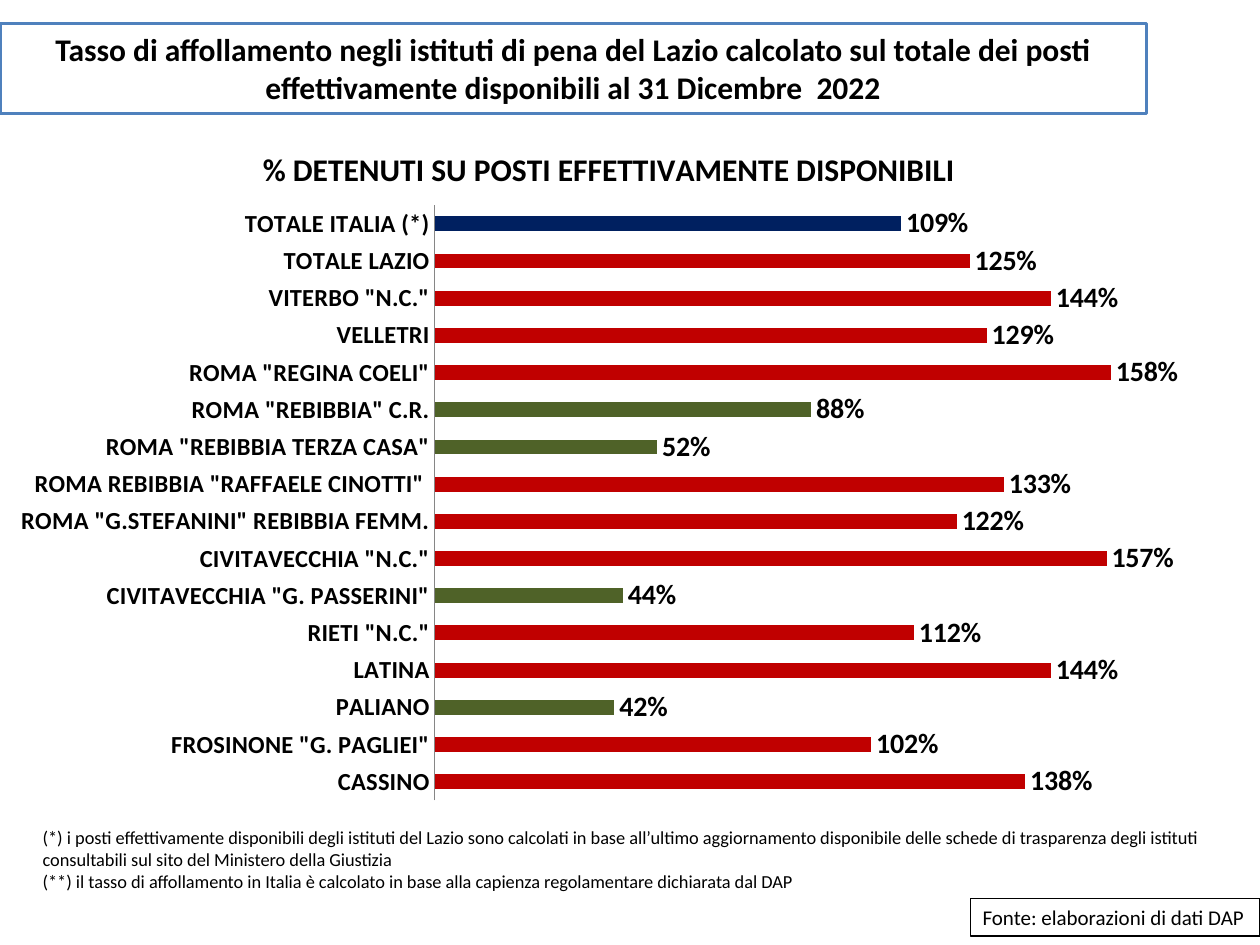
import dataclasses
import pptx
import pptx.chart.data
import pptx.dml.color
import pptx.enum.chart
import pptx.enum.shapes
import pptx.enum.text
import pptx.oxml
import pptx.oxml.ns
import pptx.util


@dataclasses.dataclass(frozen=True)
class Theme:
    font: str = "Calibri"
    ink: str = "000000"
    paper: str = "FFFFFF"
    frame: str = "4F81BD"
    axis: str = "868686"
    over: str = "C00000"
    under: str = "4F6228"
    nation: str = "002060"
    head: float = 18
    value: float = 16
    label: float = 14
    source: float = 12
    note: float = 10.5


THEME = Theme()
WIDE, HIGH = pptx.util.Inches(10), pptx.util.Inches(7.5)
TOTAL = "TOTALE ITALIA (*)"
RATES = [
    ("CASSINO", 1.38),
    ('FROSINONE "G. PAGLIEI"', 1.02),
    ("PALIANO", 0.42),
    ("LATINA", 1.44),
    ('RIETI "N.C."', 1.12),
    ('CIVITAVECCHIA "G. PASSERINI"', 0.44),
    ('CIVITAVECCHIA "N.C."', 1.57),
    ('ROMA "G.STEFANINI" REBIBBIA FEMM.', 1.22),
    ('ROMA REBIBBIA "RAFFAELE CINOTTI" ', 1.33),
    ('ROMA "REBIBBIA TERZA CASA"', 0.52),
    ('ROMA "REBIBBIA" C.R.', 0.88),
    ('ROMA "REGINA COELI"', 1.58),
    ("VELLETRI", 1.29),
    ('VITERBO "N.C."', 1.44),
    ("TOTALE LAZIO", 1.25),
    (TOTAL, 1.09),
]
NOTES = [
    "(*) i posti effettivamente disponibili degli istituti del Lazio sono calcolati in base "
    "all’ultimo aggiornamento disponibile delle schede di trasparenza degli istituti "
    "consultabili sul sito del Ministero della Giustizia",
    "(**) il tasso di affollamento in Italia è calcolato in base alla capienza "
    "regolamentare dichiarata dal DAP",
]


def area(left, top, width, height):
    return [int(part * side / 100) for part, side in
            ((left, WIDE), (top, HIGH), (width, WIDE), (height, HIGH))]


def tint(name):
    return pptx.dml.color.RGBColor.from_string(name)


def paint(fill, name):
    fill.solid()
    fill.fore_color.rgb = tint(name)


def style(font, size, bold=False):
    font.name, font.size, font.bold = THEME.font, pptx.util.Pt(size), bold
    font.color.rgb = tint(THEME.ink)


def border(shape, name, width):
    paint(shape.fill, THEME.paper)
    shape.line.color.rgb = tint(name)
    shape.line.width = pptx.util.Pt(width)


def write(shape, lines, size, align, bold=False, wrap=True):
    frame = shape.text_frame
    frame.word_wrap = wrap
    frame.text = "\n".join(lines)
    for para in frame.paragraphs:
        para.alignment = align
        style(para.font, size, bold)
    return frame


def heading(slide, box):
    title = slide.shapes.title
    title.left, title.top, title.width, title.height = box
    border(title, THEME.frame, 2)
    frame = write(title, ["Tasso di affollamento negli istituti di pena del Lazio calcolato sul "
                          "totale dei posti effettivamente disponibili al 31 Dicembre  2022"],
                  THEME.head, pptx.enum.text.PP_ALIGN.CENTER, bold=True)
    frame.vertical_anchor = pptx.enum.text.MSO_ANCHOR.TOP
    frame.auto_size = pptx.enum.text.MSO_AUTO_SIZE.NONE


def layout(parent, inner=False, **shares):
    names = pptx.oxml.ns.nsdecls("c")
    target = '<c:layoutTarget val="inner"/>' if inner else ""
    modes = "".join(f'<c:{key}Mode val="edge"/>' for key in "xy")
    sizes = "".join(f'<c:{key} val="{share}"/>' for key, share in shares.items())
    for old in parent.findall(pptx.oxml.ns.qn("c:layout")):
        parent.remove(old)
    node = pptx.oxml.parse_xml(f"<c:layout {names}><c:manualLayout>{target}{modes}{sizes}"
                               "</c:manualLayout></c:layout>")
    text = parent.find(pptx.oxml.ns.qn("c:tx"))
    parent.insert(0 if text is None else parent.index(text) + 1, node)


def shade(name, rate):
    if name == TOTAL:
        return THEME.nation
    return THEME.over if rate > 1 else THEME.under


def graph(slide, box):
    data = pptx.chart.data.CategoryChartData(number_format="0%")
    data.categories = [name for name, rate in RATES]
    data.add_series("Series 1", [rate for name, rate in RATES])
    kind = pptx.enum.chart.XL_CHART_TYPE.BAR_CLUSTERED
    chart = slide.shapes.add_chart(kind, *box, data).chart
    style(chart.font, 13, True)
    chart.has_legend = False

    chart.has_title = True
    para = chart.chart_title.text_frame.paragraphs[0]
    para.text = "% DETENUTI SU POSTI EFFETTIVAMENTE DISPONIBILI"
    style(para.font, THEME.head, True)
    chart.chart_title.include_in_layout = False
    part = chart._chartSpace.chart
    layout(part.find(pptx.oxml.ns.qn("c:title")), x=0.21, y=0.04)
    layout(part.plotArea, True, x=0.355, y=0.13, w=0.629, h=0.842)

    names, rates = chart.category_axis, chart.value_axis
    names.major_tick_mark = pptx.enum.chart.XL_TICK_MARK.NONE
    names.format.line.color.rgb = tint(THEME.axis)
    style(names.tick_labels.font, THEME.label, True)
    rates.minimum_scale, rates.maximum_scale = 0, 1.8
    rates.has_major_gridlines = False
    rates.visible = False

    plot = chart.plots[0]
    plot.gap_width = 150
    plot.vary_by_categories = False
    bars = plot.series[0]
    bars.invert_if_negative = False
    paint(bars.format.fill, THEME.over)
    for index, pair in enumerate(RATES):
        if shade(*pair) != THEME.over:
            paint(bars.points[index].format.fill, shade(*pair))
    labels = bars.data_labels
    labels.show_value = True
    labels.number_format, labels.number_format_is_linked = "0%", False
    labels.position = pptx.enum.chart.XL_LABEL_POSITION.OUTSIDE_END
    style(labels.font, THEME.value, True)


def notes(slide, box):
    write(slide.shapes.add_textbox(*box), NOTES, THEME.note, pptx.enum.text.PP_ALIGN.LEFT)


def source(slide, box):
    shape = slide.shapes.add_shape(pptx.enum.shapes.MSO_SHAPE.RECTANGLE, *box)
    shape.shadow.inherit = False
    border(shape, THEME.ink, 0.75)
    write(shape, ["Fonte: elaborazioni di dati DAP"], THEME.source,
          pptx.enum.text.PP_ALIGN.LEFT, wrap=False)


def main():
    deck = pptx.Presentation()
    deck.slide_width, deck.slide_height = WIDE, HIGH
    slide = deck.slides.add_slide(deck.slide_layouts[5])
    heading(slide, area(0, 2.5, 91, 9.5))
    notes(slide, area(2.4, 86.8, 97.6, 8.4))
    source(slide, area(77, 95.07, 23, 4.0))
    graph(slide, area(0, 12, 97.2, 74.8))
    deck.save("out.pptx")


if __name__ == "__main__":
    main()
